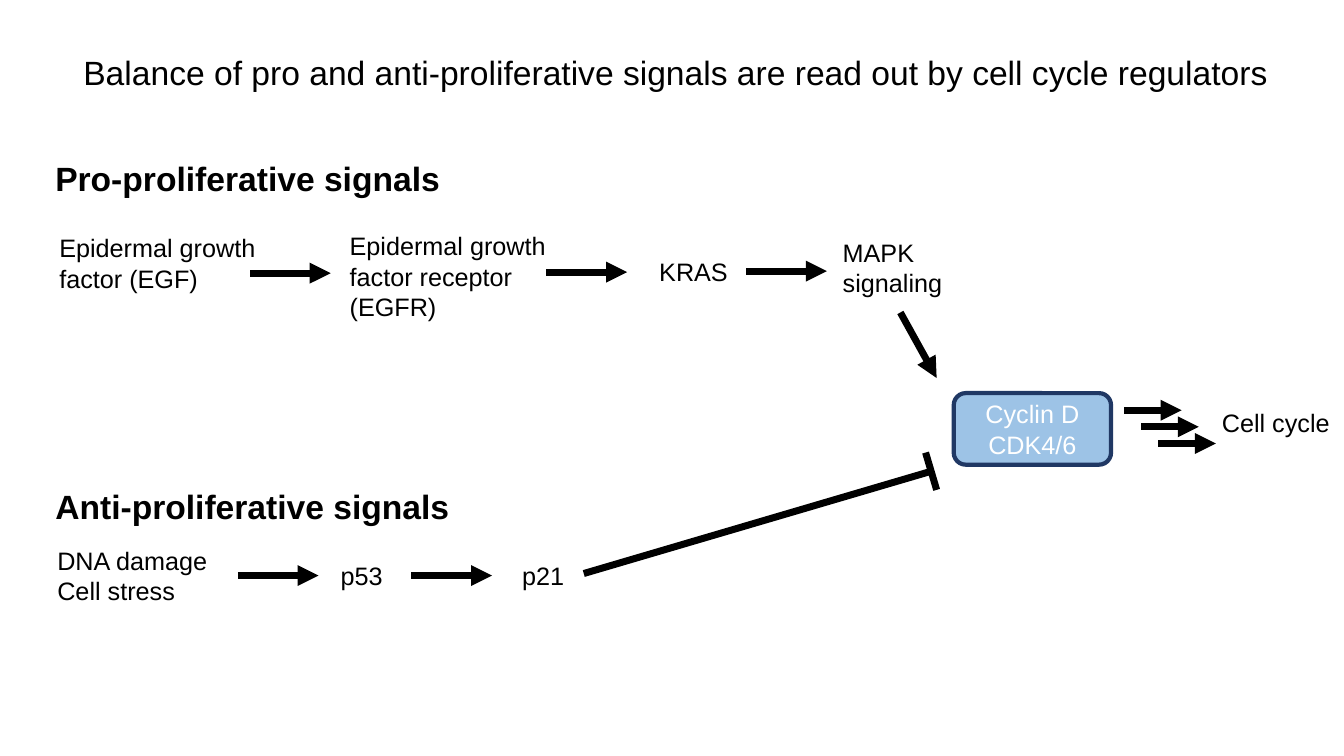
import pptx
import pptx.dml.color
import pptx.enum.shapes
import pptx.enum.text
import pptx.oxml
import pptx.oxml.ns
import pptx.util
from dataclasses import dataclass

Align = pptx.enum.text.PP_ALIGN
Anchor = pptx.enum.text.MSO_ANCHOR
RIGHT_SIDE = 3


@dataclass
class Theme:
    font: str = "Arial"
    ink: str = "000000"
    box_fill: str = "9DC3E6"
    box_line: str = "203864"
    box_text: str = "FFFFFF"
    heading: int = 24
    label: int = 18
    arrow_width: int = 5
    box_width: int = 3


def color(code):
    return pptx.dml.color.RGBColor.from_string(code)


class Diagram:
    """Places elements on a grid of square cells, ten to the inch."""
    CELL = 0.1

    def __init__(self, prs, theme):
        self.theme = theme
        self.slide = prs.slides.add_slide(prs.slide_layouts[6])

    def grid(self, *cells):
        return [pptx.util.Inches(n * self.CELL) for n in cells]

    def fill_text(self, sp, lines, size, ink, bold=False, align=Align.LEFT,
                  anchor=Anchor.TOP, wrap=True):
        tf = sp.text_frame
        tf.word_wrap = wrap
        tf.vertical_anchor = anchor
        for i, line in enumerate(lines):
            p = tf.paragraphs[0] if i == 0 else tf.add_paragraph()
            p.alignment = align
            r = p.add_run()
            r.text = line
            r.font.name = self.theme.font
            r.font.size = pptx.util.Pt(size)
            r.font.bold = bold
            r.font.color.rgb = color(ink)

    def text(self, col, row, cols, rows, *lines, size=None, **style):
        sp = self.slide.shapes.add_textbox(*self.grid(col, row, cols, rows))
        self.fill_text(sp, lines, size or self.theme.label, self.theme.ink, **style)
        return sp

    def heading(self, col, row, cols, rows, line, **style):
        return self.text(col, row, cols, rows, line, size=self.theme.heading, **style)

    def box(self, col, row, cols, rows, line):
        kind = pptx.enum.shapes.MSO_SHAPE.ROUNDED_RECTANGLE
        sp = self.slide.shapes.add_shape(kind, *self.grid(col, row, cols, rows))
        sp.shadow.inherit = False
        sp.fill.solid()
        sp.fill.fore_color.rgb = color(self.theme.box_fill)
        sp.line.color.rgb = color(self.theme.box_line)
        sp.line.width = pptx.util.Pt(self.theme.box_width)
        self.fill_text(sp, [line], self.theme.label, self.theme.box_text,
                       align=Align.CENTER, anchor=Anchor.MIDDLE)

    def line(self, start, end, shapes=None):
        shapes = shapes or self.slide.shapes
        kind = pptx.enum.shapes.MSO_CONNECTOR.STRAIGHT
        cxn = shapes.add_connector(kind, *self.grid(*start, *end))
        cxn.line.color.rgb = color(self.theme.ink)
        cxn.line.width = pptx.util.Pt(self.theme.arrow_width)
        sp_pr = cxn._element.spPr
        sp_pr.append(pptx.oxml.parse_xml(
            "<a:effectLst %s/>" % pptx.oxml.ns.nsdecls("a")))
        return cxn

    def arrow(self, start, end, source=None):
        cxn = self.line(start, end)
        if source is not None:
            cxn.begin_connect(source, RIGHT_SIDE)
        cxn.line._get_or_add_ln().append(pptx.oxml.parse_xml(
            '<a:tailEnd type="triangle" %s/>' % pptx.oxml.ns.nsdecls("a")))

    def inhibitor(self, start, end, bar_start, bar_end):
        group = self.slide.shapes.add_group_shape()
        self.line(bar_start, bar_end, group.shapes)
        self.line(start, end, group.shapes)


def main():
    prs = pptx.Presentation()
    prs.slide_width = pptx.util.Inches(13.33)
    prs.slide_height = pptx.util.Inches(7.5)
    d = Diagram(prs, Theme())

    # Title and section headings
    d.heading(2.6, 4, 128.8, 6.2,
              "Balance of pro and anti-proliferative signals are read out "
              "by cell cycle regulators", align=Align.CENTER, anchor=Anchor.MIDDLE)
    d.heading(4.5, 15.2, 42, 5, "Pro-proliferative signals", bold=True)
    d.heading(4.5, 47.7, 41.5, 5, "Anti-proliferative signals", bold=True, wrap=False)

    # Pro-proliferative pathway
    d.text(4.9, 22.6, 23.7, 7.1, "Epidermal growth factor (EGF)")
    d.text(33.7, 22.4, 25.7, 10.1, "Epidermal growth factor receptor (EGFR)")
    kras = d.text(64.4, 24.9, 9.6, 4, "KRAS")
    d.text(82.6, 23, 16.8, 7.1, "MAPK signaling")
    step = 8
    for col, row, source in ((24.8, 27.1, None), (54.2, 27, None), (74, 26.9, kras)):
        d.arrow((col, row), (col + step, row), source)
    d.arrow((89.3, 31), (92.9, 37.5))

    # Anti-proliferative pathway
    d.text(4.7, 53.6, 17.9, 7.1, "DNA damage", "Cell stress")
    p53 = d.text(32.8, 55.1, 8, 4, "p53")
    d.text(50.8, 55.1, 8, 4, "p21")
    for col, source in ((23.6, None), (40.8, p53)):
        d.arrow((col, 57.1), (col + step, 57.1), source)
    d.inhibitor((57.9, 56.9), (92.2, 46.8), (92.9, 48.6), (91.8, 44.9))

    # Cell cycle regulator and its output
    d.box(94.6, 39, 15.6, 7.1, "Cyclin D CDK4/6")
    for i in range(3):
        col, row = 111.5 + 1.7 * i, 40.7 + 1.65 * i
        d.arrow((col, row), (col + 5.7, row))
    d.text(120.2, 39.9, 13.1, 4, "Cell cycle", wrap=False)

    prs.save("out.pptx")


if __name__ == "__main__":
    main()
